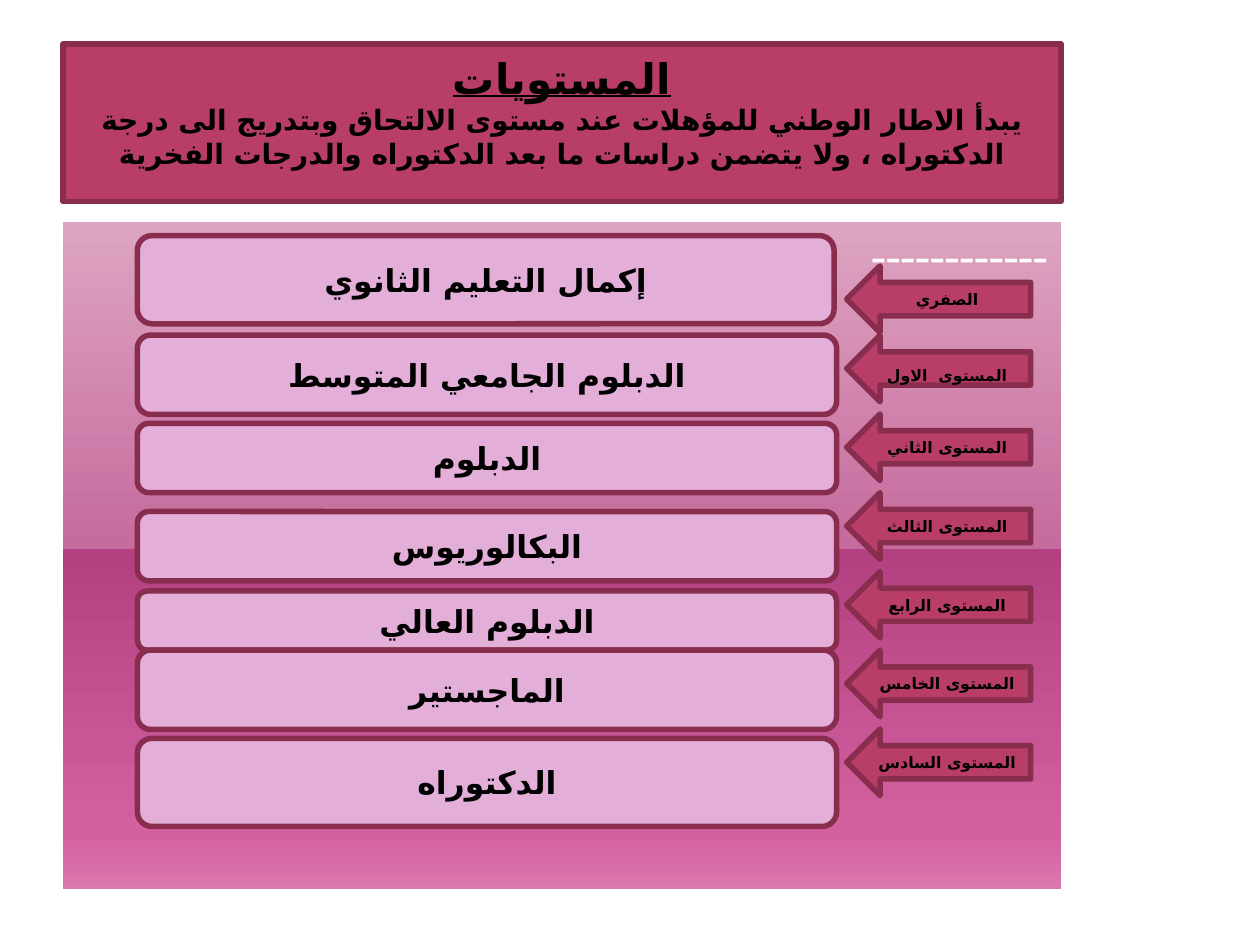
from dataclasses import dataclass

import pptx
import pptx.dml.color
import pptx.enum.shapes
import pptx.enum.text
import pptx.oxml
import pptx.oxml.ns
import pptx.util
from pptx.util import Inches

SHAPES = pptx.enum.shapes.MSO_SHAPE
ANCHOR = pptx.enum.text.MSO_ANCHOR
ALIGN = pptx.enum.text.PP_ALIGN


@dataclass(frozen=True)
class Theme:
    font: str = "Lato"
    arabic_font: str = "DejaVu Sans"
    accent: str = "B83D68"
    border: str = "882D4D"
    bar: str = "E3AFD8"
    ink: str = "000000"
    light: str = "FFFFFF"
    border_width: float = 3.15
    heading_size: int = 24
    body_size: int = 16
    bar_size: int = 18
    arrow_size: int = 9
    dash_size: int = 26
    dash_spacing: int = -100
    panel_stops: tuple = ((0, "DDA4C1"), (49, "C66B9D"), (49, "B34181"),
                          (92, "D361A0"), (100, "DC79AE"))


THEME = Theme()

LEVELS = ["الصفري", "المستوى الاول", "المستوى الثاني", "المستوى الثالث",
          "المستوى الرابع", "المستوى الخامس", "المستوى السادس"]

# Qualification, top, width, height
QUALIFICATIONS = [
    ("إكمال التعليم الثانوي", 1.87, 5.53, 0.7),
    ("الدبلوم الجامعي المتوسط", 2.66, 5.55, 0.63),
    ("الدبلوم", 3.36, 5.55, 0.55),
    ("البكالوريوس", 4.06, 5.55, 0.55),
    ("الدبلوم العالي", 4.69, 5.55, 0.47),
    ("الماجستير", 5.16, 5.55, 0.63),
    ("الدكتوراه", 5.86, 5.55, 0.7),
]


def color(value):
    return pptx.dml.color.RGBColor.from_string(value)


def set_attributes(target, values):
    for name, value in values.items():
        setattr(target, name, value)


def add_box(slide, kind, box, fill=None):
    """Add a shape; with a fill colour it also gets the common border."""
    shape = slide.shapes.add_shape(kind, *map(Inches, box))
    shape.shadow.inherit = False
    if fill:
        shape.fill.solid()
        shape.fill.fore_color.rgb = color(fill)
        shape.line.color.rgb = color(THEME.border)
        shape.line.width = pptx.util.Pt(THEME.border_width)
    else:
        shape.line.fill.background()
    return shape


def set_gradient(shape, stops):
    """Fill from top to bottom with any number of stops."""
    shape.fill.gradient()
    shape.fill.gradient_angle = 270
    stop_list = shape._element.spPr.find(".//" + pptx.oxml.ns.qn("a:gsLst"))
    for stop in list(stop_list):
        stop_list.remove(stop)
    for position, value in stops:
        stop_list.append(pptx.oxml.parse_xml(
            f'<a:gs {pptx.oxml.ns.nsdecls("a")} pos="{position * 1000}">'
            f'<a:srgbClr val="{value}"/></a:gs>'))


def write_paragraph(paragraph, runs, align=ALIGN.CENTER, **font):
    """Write (text, size) runs from right to left."""
    paragraph.alignment = align
    paragraph._p.get_or_add_pPr().set("rtl", "1")
    values = {"name": THEME.font, "bold": True} | font
    ink = values.pop("ink", THEME.ink)
    for text, size in runs:
        run = paragraph.add_run()
        run.text = text
        set_attributes(run.font, values | {"size": pptx.util.Pt(size)})
        run.font.color.rgb = color(ink)
        properties = run._r.get_or_add_rPr()
        properties.set("lang", "ar-SA")
        properties.append(pptx.oxml.parse_xml(
            f'<a:cs {pptx.oxml.ns.nsdecls("a")} '
            f'typeface="{THEME.arabic_font}"/>'))


def add_title(slide):
    frame = add_box(slide, SHAPES.RECTANGLE, (0.5, 0.35, 7.92, 1.25),
                    THEME.accent).text_frame
    set_attributes(frame, {
        "word_wrap": True, "vertical_anchor": ANCHOR.BOTTOM,
        "margin_left": Inches(0.05), "margin_right": Inches(0.05),
        "margin_top": 0, "margin_bottom": Inches(0.25)})
    write_paragraph(frame.paragraphs[0], [("المستويات", THEME.heading_size)],
                    underline=True)
    write_paragraph(frame.add_paragraph(), [(
        "يبدأ الاطار الوطني للمؤهلات عند مستوى الالتحاق وبتدريج الى درجة "
        "الدكتوراه ، ولا يتضمن دراسات ما بعد الدكتوراه والدرجات الفخرية",
        THEME.body_size)])


def add_panel(slide):
    panel = add_box(slide, SHAPES.RECTANGLE, (0.5, 1.76, 7.92, 5.3))
    set_gradient(panel, THEME.panel_stops)
    panel.text_frame.vertical_anchor = ANCHOR.TOP
    dashes = panel.text_frame.paragraphs[0]
    write_paragraph(dashes, [("-" * 12, THEME.dash_size)], ALIGN.RIGHT,
                    bold=False, ink=THEME.light)
    dashes.runs[0]._r.get_or_add_rPr().set("spc", str(THEME.dash_spacing))


def add_label(slide, kind, box, fill, runs):
    frame = add_box(slide, kind, box, fill).text_frame
    set_attributes(frame, {"word_wrap": True, "vertical_anchor": ANCHOR.MIDDLE})
    write_paragraph(frame.paragraphs[0], runs)


def add_level_arrows(slide):
    first_top, second_top, pitch = 2.11, 2.66, 5 / 8
    for index, level in enumerate(LEVELS):
        top = second_top + (index - 1) * pitch if index else first_top
        runs = [(level, THEME.arrow_size)]
        if index == 1:
            word, ordinal = level.split()
            runs = [(word, THEME.arrow_size), (" ", THEME.bar_size),
                    (ordinal, THEME.arrow_size)]
        add_label(slide, SHAPES.LEFT_ARROW, (6.72, top, 1.46, 0.53),
                  THEME.accent, runs)


def add_qualification_bars(slide):
    for name, top, width, height in QUALIFICATIONS:
        add_label(slide, SHAPES.ROUNDED_RECTANGLE, (1.09, top, width, height),
                  THEME.bar, [(name, THEME.bar_size)])


def main():
    presentation = pptx.Presentation()
    set_attributes(presentation, {"slide_width": Inches(10),
                                  "slide_height": Inches(7.5)})
    slide = presentation.slides.add_slide(presentation.slide_layouts[6])
    add_title(slide)
    add_panel(slide)
    add_level_arrows(slide)
    add_qualification_bars(slide)
    presentation.save("out.pptx")


if __name__ == "__main__":
    main()
